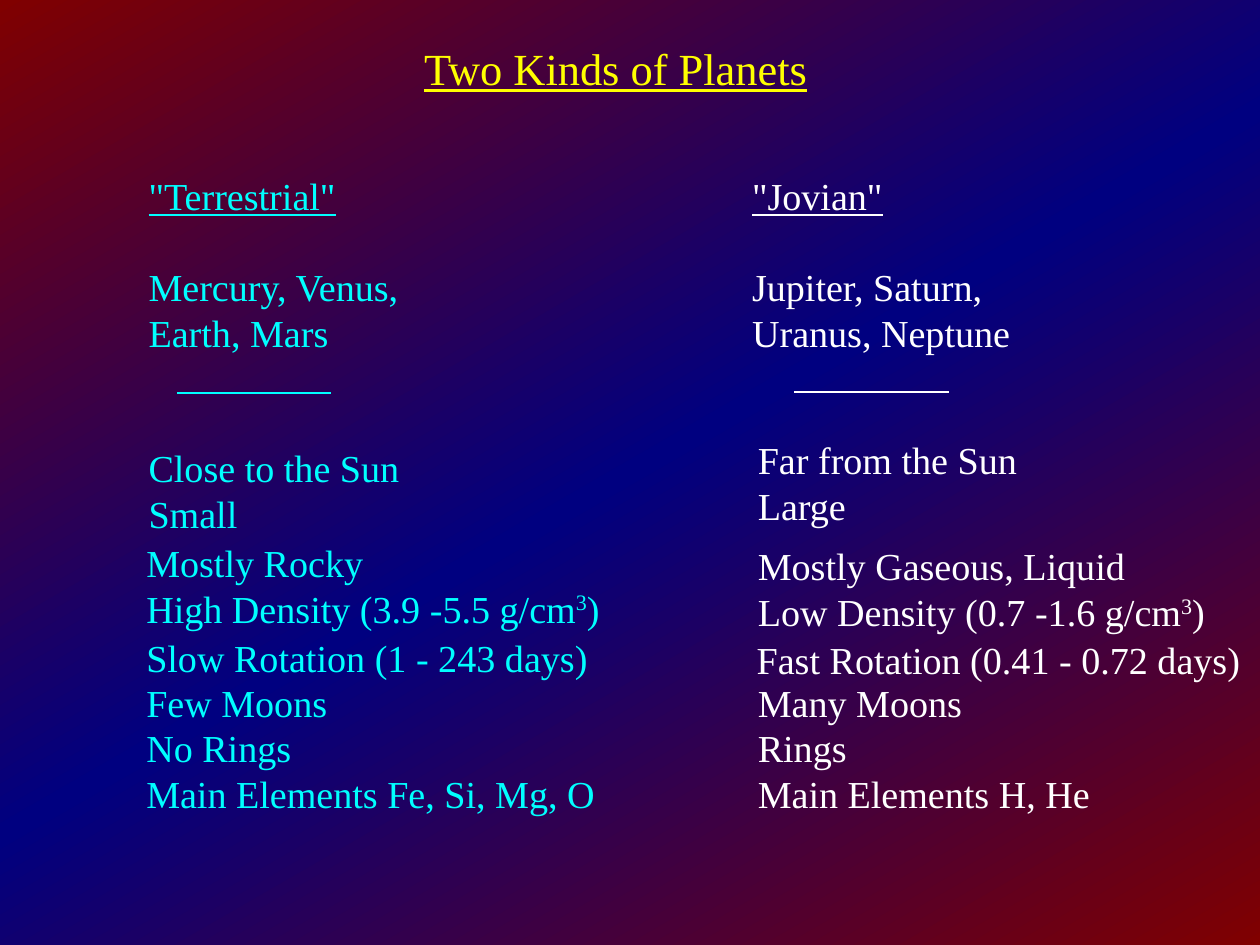
from copy import deepcopy

from lxml.etree import SubElement
from pptx import Presentation
from pptx.dml.color import RGBColor
from pptx.enum.shapes import MSO_CONNECTOR
from pptx.enum.text import MSO_AUTO_SIZE, PP_ALIGN
from pptx.oxml.ns import qn
from pptx.util import Inches, Pt

COLORS = {"title": "FFFF00", "terrestrial": "00FFFF", "jovian": "FFFFFF",
          "edge": "800000", "middle": "000080"}
FONT = "Times New Roman"
LINE_HEIGHT = 0.4
CM_PER_INCH = 2.54

# Offsets (dx, dy) and widths are relative to each column's top left corner.
# "^" in a line encloses superscript text.
TERRESTRIAL = {
    "heading": '"Terrestrial"',
    "planets": ["Mercury, Venus,", "Earth, Mars"],
    "planets_width": 3.4,
    "rule": (0.25, 1.93),
    "facts": [
        (0, 2.38, ["Close to the Sun", "Small"]),
        (-0.02, 3.21, ["Mostly Rocky", "High Density (3.9 -5.5 g/cm^3^)"]),
        (-0.02, 4.04, ["Slow Rotation (1 - 243 days)"]),
        (-0.02, 4.43, ["Few Moons", "No Rings", "Main Elements Fe, Si, Mg, O"]),
    ],
}
JOVIAN = {
    "heading": '"Jovian"',
    "planets": ["Jupiter, Saturn, Uranus, Neptune"],
    "planets_width": 2.43,
    "rule": (0.37, 1.92),
    "facts": [
        (0.05, 2.31, ["Far from the Sun", "Large"]),
        (0.05, 3.24, ["Mostly Gaseous, Liquid", "Low Density (0.7 -1.6 g/cm^3^)"]),
        (0.04, 4.06, ["Fast Rotation (0.41 - 0.72 days)"]),
        (0.05, 4.43, ["Many Moons", "Rings", "Main Elements H, He"]),
    ],
}


def rgb(name):
    return RGBColor.from_string(COLORS[name])


def paint_background(s):
    """Red to blue to red, running down to the right."""
    fill = s.background.fill
    fill.gradient()
    fill.gradient_angle = 300
    stops = next(s.element.iter(qn("a:gsLst")))
    stops.append(deepcopy(stops[-1]))
    for stop, position, name in zip(fill.gradient_stops, (0, 0.5, 1),
                                    ("edge", "middle", "edge")):
        stop.position = position
        stop.color.rgb = rgb(name)


def add_text(s, x, y, w, h, lines, color, size=24):
    tf = s.shapes.add_textbox(Inches(x), Inches(y), Inches(w), Inches(h)).text_frame
    tf.margin_left = tf.margin_right = tf.margin_top = tf.margin_bottom = 0
    tf.word_wrap = True
    tf.auto_size = MSO_AUTO_SIZE.SHAPE_TO_FIT_TEXT
    for i, line in enumerate(lines):
        p = tf.add_paragraph() if i else tf.paragraphs[0]
        for j, part in enumerate(line.split("^")):
            r = p.add_run()
            r.text = part
            r.font.name = FONT
            r.font.size = Pt(size)
            r.font.color.rgb = rgb(color)
            if j % 2:
                r.font._element.set("baseline", "33000")
    return tf


def add_title(s, x, y, w, h):
    tf = add_text(s, x, y, w, h, ["Two Kinds of Planets"], "title", 28)
    p = tf.paragraphs[0]
    p.alignment = PP_ALIGN.CENTER
    p.runs[0].font.underline = True


def add_rule(s, x, y, w, color):
    line = s.shapes.add_connector(MSO_CONNECTOR.STRAIGHT, Inches(x), Inches(y),
                                  Inches(x + w), Inches(y))
    line.line.color.rgb = rgb(color)
    line.line.width = Pt(1.45)
    SubElement(line._element.spPr, qn("a:effectLst"))


def add_column(s, x, y, w, kind, color):
    # Heading and planet names
    tf = add_text(s, x, y, kind["planets_width"], 4 * LINE_HEIGHT,
                  [kind["heading"], *kind["planets"]], color)
    p = tf.paragraphs[0]
    p.space_after = Pt(28.7)
    p.runs[0].font.underline = True

    # Divider
    dx, dy = kind["rule"]
    add_rule(s, x + dx, y + dy, 1.35, color)

    # Properties
    for dx, dy, lines in kind["facts"]:
        add_text(s, x + dx, y + dy, w, len(lines) * LINE_HEIGHT, lines, color)


def main():
    prs = Presentation()
    prs.slide_width = Inches(28 / CM_PER_INCH)
    prs.slide_height = Inches(21 / CM_PER_INCH)
    s = prs.slides.add_slide(prs.slide_layouts[6])
    paint_background(s)
    add_title(s, 2.02, 0.36, 6.73, 0.44)
    add_column(s, 1.3, 1.51, 4.23, TERRESTRIAL, "terrestrial")
    add_column(s, 6.58, 1.51, 4.39, JOVIAN, "jovian")
    prs.save("out.pptx")


if __name__ == "__main__":
    main()
